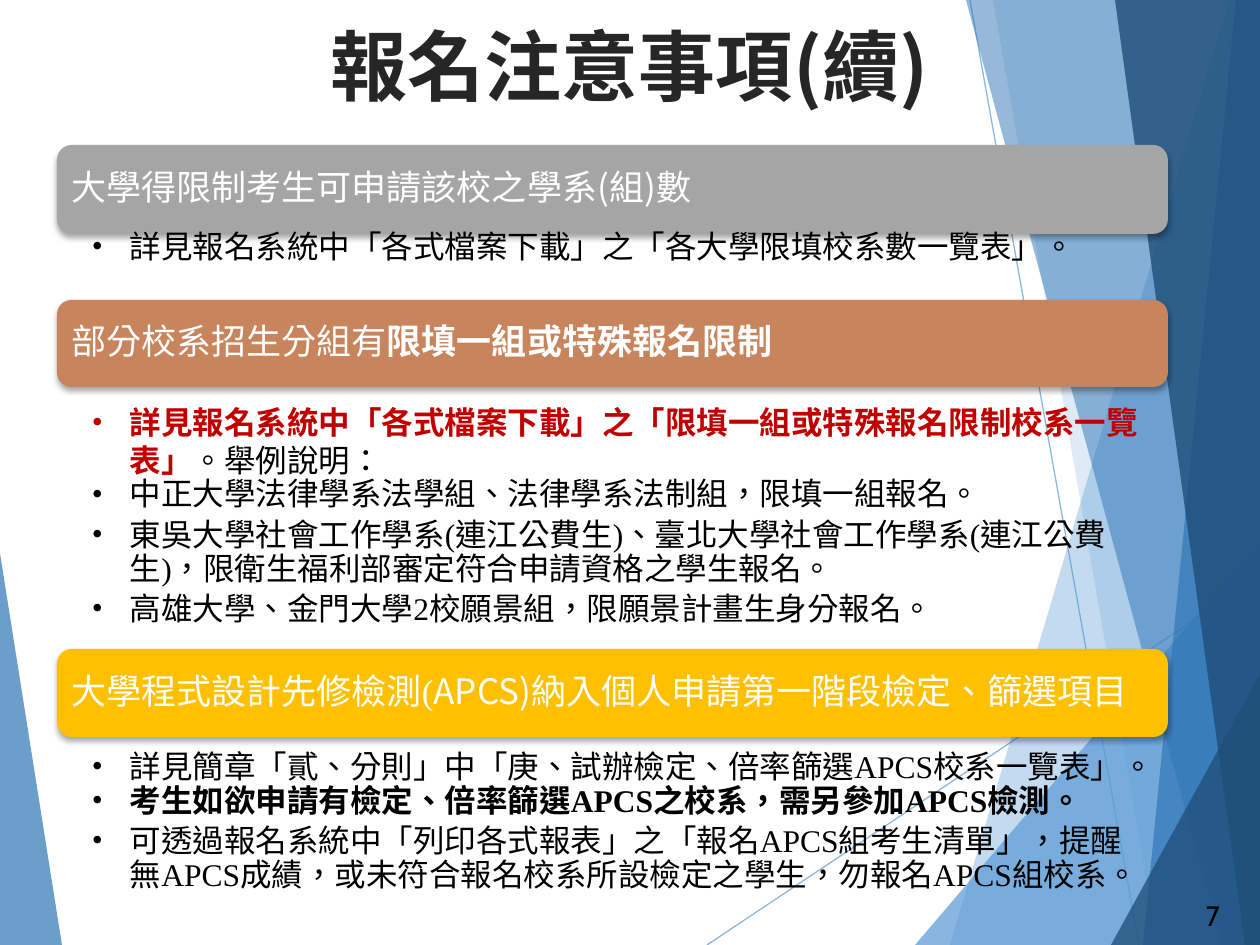
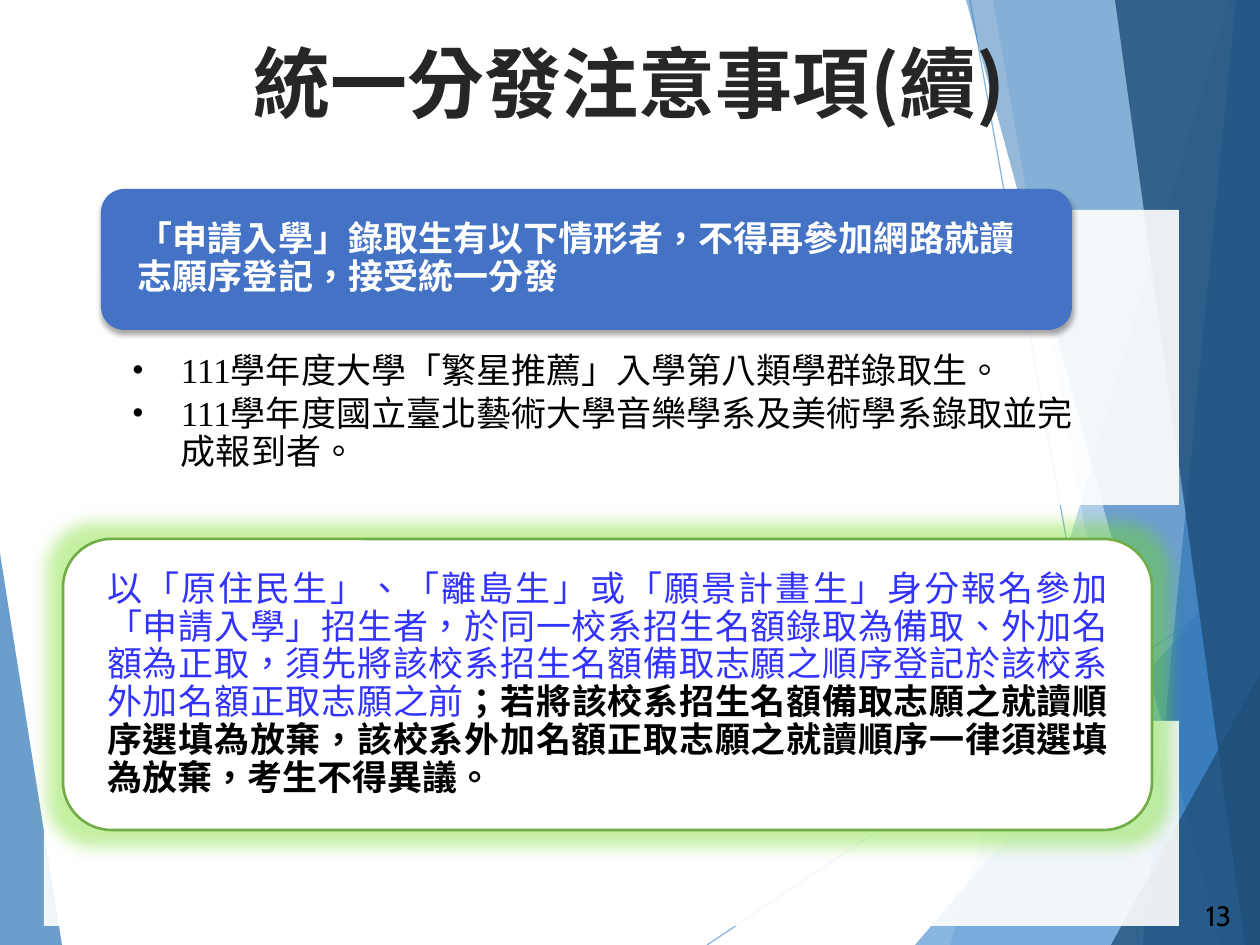
"""Build two slides of admission notes on a shared faceted blue background."""
from lxml.etree import SubElement
from pptx import Presentation
from pptx.dml.color import RGBColor
from pptx.enum.shapes import MSO_CONNECTOR, MSO_SHAPE
from pptx.enum.text import MSO_ANCHOR, PP_ALIGN
from pptx.oxml import parse_xml
from pptx.oxml.ns import nsdecls, qn
from pptx.util import Pt

PX = 914400 / 126
SKY = RGBColor(0x5B, 0x9B, 0xD5)
BLUE = RGBColor(0x2E, 0x75, 0xB6)
NAVY = RGBColor(0x1F, 0x4E, 0x79)
ROYAL = RGBColor(0x44, 0x72, 0xC4)
GRAY = RGBColor(0xA5, 0xA5, 0xA5)
COPPER = RGBColor(0xC8, 0x84, 0x5C)
GOLD = RGBColor(0xFF, 0xC0, 0x00)
GREEN = RGBColor(0x70, 0xAD, 0x47)
WHITE = RGBColor(0xFF, 0xFF, 0xFF)
BLACK = RGBColor(0x00, 0x00, 0x00)
CHARCOAL = RGBColor(0x26, 0x26, 0x26)
RED = RGBColor(0xC0, 0x00, 0x00)
VIOLET = RGBColor(0x33, 0x33, 0xFF)

SANS, SERIF, LABEL = "Noto Sans CJK SC", "Times New Roman", "Cabin"
TITLE = {"name": SANS, "size": Pt(44), "bold": True, "rgb": CHARCOAL}
NUMBER = {"name": LABEL, "size": Pt(16), "bold": False, "rgb": BLACK}
HEAD = {"name": SANS, "size": Pt(20), "bold": False, "rgb": WHITE}
HEAD_BOLD = HEAD | {"bold": True}
HEAD_SERIF = HEAD | {"name": SERIF}
BODY = {"name": SERIF, "size": Pt(18), "bold": False, "rgb": BLACK}
BODY_BOLD = BODY | {"bold": True}
BODY_RED = BODY_BOLD | {"rgb": RED}
LARGE = BODY | {"size": Pt(20)}
LARGE_BOLD = LARGE | {"bold": True}
LARGE_VIOLET = LARGE | {"rgb": VIOLET}
LARGE_HEAD = LARGE_BOLD | {"rgb": WHITE}

CENTER = {"alignment": PP_ALIGN.CENTER}
PLAIN = {"alignment": PP_ALIGN.LEFT}
LOOSE = {"alignment": PP_ALIGN.LEFT, "line_spacing": 1.0}
TIGHT = {"alignment": PP_ALIGN.LEFT, "line_spacing": 0.9}
ITEM = TIGHT | {"space_after": Pt(3.6)}
LARGE_ITEM = TIGHT | {"space_after": Pt(3)}
JUSTIFIED = TIGHT | {"alignment": PP_ALIGN.JUSTIFY}

SHADOW = ('<a:outerShdw %s blurRad="38100" dist="25400" dir="5400000" rotWithShape="0">'
          '<a:srgbClr val="000000"><a:alpha val="35000"/></a:srgbClr></a:outerShdw>')
GLOW = ('<a:glow %s rad="228600"><a:srgbClr val="6FDB18">'
        '<a:alpha val="40000"/></a:srgbClr></a:glow>')

RAYS = [(707, 945, 1260, 576), (970, 0, 1139, 945)]
FACETS = [
    (SKY, 36, [(1229, 0), (950, 945), (1260, 945), (1260, 0)]),
    (SKY, 20, [(993, 0), (1158, 945), (1260, 945), (1260, 0)]),
    (SKY, 72, [(915, 945), (1260, 541), (1260, 945)]),
    (BLUE, 50, [(966, 0), (1222, 945), (1260, 945), (1260, 0)]),
    (BLUE, 66, [(1236, 0), (1143, 945), (1260, 945), (1260, 0)]),
    (NAVY, 80, [(1115, 0), (1245, 945), (1260, 945), (1260, 0)]),
    (NAVY, 76, [(1111, 945), (1260, 674), (1260, 945)]),
    (BLUE, 70, [(0, 553), (62, 945), (0, 945)]),
]


def tint(fill, color, alpha):
    """Fill with a colour at the given percentage of opacity."""
    fill.solid()
    fill.fore_color.rgb = color
    node = next(fill._xPr.iter(qn("a:srgbClr")))
    SubElement(node, qn("a:alpha")).set("val", str(alpha * 1000))


def write(box, insets, anchor, paragraphs, hang=0):
    """Write formatted runs into a shape; a hang in px makes bullets."""
    frame = box.text_frame
    names = ("margin_left", "margin_top", "margin_right", "margin_bottom")
    settings = {name: round(inset * PX) for name, inset in zip(names, insets)}
    for name, value in (settings | {"word_wrap": True, "vertical_anchor": anchor}).items():
        setattr(frame, name, value)
    for index, (layout, runs) in enumerate(paragraphs):
        para = frame.add_paragraph() if index else frame.paragraphs[0]
        if hang:
            properties = para._p.get_or_add_pPr()
            properties.set("marL", str(round(hang * PX)))
            properties.set("indent", str(round(-hang * PX)))
            SubElement(properties, qn("a:buFont")).set("typeface", SERIF)
            SubElement(properties, qn("a:buChar")).set("char", "•")
        for name, value in layout.items():
            setattr(para, name, value)
        for text, style in runs:
            span = para.add_run()
            span.text = text
            for name, value in style.items():
                setattr(span.font.color if name == "rgb" else span.font, name, value)
            properties = span._r.get_or_add_rPr()
            properties.set("lang", "zh-TW")
            eastern = LABEL if style["name"] == SERIF else style["name"]
            SubElement(properties, qn("a:ea")).set("typeface", eastern)


TITLES = [("報名注意事項(續)", 20, "7"), ("統一分發注意事項(續)", 37, "13")]
PANELS = [[], [(44, 210, 1135, 295), (44, 721, 1135, 205)]]

BULLETS = [
    [
        ((57, 227, 1111, 62), (35, 4, 18, 4), 38, [
            (ITEM, [("詳見報名系統中「各式檔案下載」之「各大學限填校系數一覽表」。", BODY)]),
        ]),
        ((57, 399, 1111, 265), (35, 4, 18, 4), 38, [
            (LOOSE, [("詳見報名系統中「各式檔案下載」之「限填一組或特殊報名限制校系一覽表」", BODY_RED),
                     ("。舉例說明：", BODY)]),
            (ITEM, [("中正大學法律學系法學組、法律學系法制組，限填一組報名。", BODY)]),
            (ITEM, [("東吳大學社會工作學系(連江公費生)、臺北大學社會工作學系(連江公費生)，"
                     "限衛生福利部審定符合申請資格之學生報名。", BODY)]),
            (ITEM, [("高雄大學、金門大學2校願景組，限願景計畫生身分報名。", BODY)]),
        ]),
        ((57, 743, 1111, 200), (35, 4, 18, 4), 38, [
            (LOOSE, [("詳見簡章「貳、分則」中「庚、試辦檢定、倍率篩選APCS校系一覽表」。", BODY)]),
            (ITEM, [("考生如欲申請有檢定、倍率篩選APCS之校系，需另參加APCS檢測。", BODY_BOLD)]),
            (ITEM, [("可透過報名系統中「列印各式報表」之「報名APCS組考生清單」，提醒無APCS成績，"
                     "或未符合報名校系所設檢定之學生，勿報名APCS組校系。", BODY)]),
        ]),
    ],
    [
        ((44, 349, 1135, 156), (88, 4, 88, 4), 49, [
            (LARGE_ITEM, [("111學年度大學「繁星推薦」入學第八類學群錄取生。", LARGE)]),
            (LARGE_ITEM, [("111學年度國立臺北藝術大學音樂學系及美術學系錄取並完成報到者。", LARGE)]),
        ]),
    ],
]

BARS = [
    [
        ((57, 145, 1111, 89), GRAY, None, SHADOW, (10, 10, 10, 10), TIGHT,
         [("大學得限制考生可申請該校之學系(組)數", HEAD)]),
        ((57, 300, 1111, 87), COPPER, None, SHADOW, (10, 10, 10, 10), TIGHT,
         [("部分校系招生分組有", HEAD), ("限填一組或特殊報名限制", HEAD_BOLD)]),
        ((57, 649, 1111, 88), GOLD, None, SHADOW, (10, 10, 10, 10), TIGHT,
         [("大學程式設計先修檢測(", HEAD_SERIF),
          ("APCS)納入個人申請第一階段檢定、篩選項目", HEAD)]),
    ],
    [
        ((101, 189, 971, 141), ROYAL, None, SHADOW, (30, 0, 30, 0), TIGHT,
         [("「申請入學」錄取生有以下情形者，不得再參加網路就讀志願序登記，接受統一分發", LARGE_HEAD)]),
        ((63, 539, 1089, 291), WHITE, GREEN, GLOW, (30, 0, 30, 0), JUSTIFIED,
         [("以「原住民生」、「離島生」或「願景計畫生」身分報名參加「申請入學」招生者，"
           "於同一校系招生名額錄取為備取、外加名額為正取，"
           "須先將該校系招生名額備取志願之順序登記於該校系外加名額正取志願之前", LARGE_VIOLET),
          ("；若將該校系招生名額備取志願之就讀順序選填為放棄，"
           "該校系外加名額正取志願之就讀順序一律須選填為放棄，考生不得異議。", LARGE_BOLD)]),
    ],
]

deck = Presentation()
deck.slide_width, deck.slide_height = round(1260 * PX), round(945 * PX)

for (title, title_top, number), panels, bullets, bars in zip(TITLES, PANELS, BULLETS, BARS):
    page = deck.slides.add_slide(deck.slide_layouts[6])
    shapes = page.shapes

    for ray in RAYS:
        line = shapes.add_connector(MSO_CONNECTOR.STRAIGHT, *[round(v * PX) for v in ray])
        line.line.width = Pt(0.75)
        tint(line.line.fill, SKY, 70)
        SubElement(line._element.spPr, qn("a:effectLst"))

    for color, alpha, points in FACETS:
        builder = shapes.build_freeform(*points[0], scale=PX)
        builder.add_line_segments(points[1:], close=True)
        facet = builder.convert_to_shape()
        facet.shadow.inherit = False
        facet.line.fill.background()
        tint(facet.fill, color, alpha)

    box = shapes.add_textbox(*[round(v * PX) for v in (1193, 892, 66, 47)])
    write(box, (13, 6, 13, 6), MSO_ANCHOR.TOP, [(PLAIN, [(number, NUMBER)])])
    box = shapes.add_textbox(*[round(v * PX) for v in (57, title_top, 1145, 89)])
    write(box, (13, 6, 13, 6), MSO_ANCHOR.MIDDLE, [(CENTER, [(title, TITLE)])])

    for place in panels:
        panel = shapes.add_shape(MSO_SHAPE.RECTANGLE, *[round(v * PX) for v in place])
        panel.shadow.inherit = False
        panel.line.fill.background()
        tint(panel.fill, WHITE, 90)

    for place, color, outline, effect, insets, layout, runs in bars:
        bar = shapes.add_shape(MSO_SHAPE.ROUNDED_RECTANGLE, *[round(v * PX) for v in place])
        bar.shadow.inherit = False
        bar._element.spPr.find(qn("a:effectLst")).append(parse_xml(effect % nsdecls("a")))
        bar.fill.solid()
        bar.fill.fore_color.rgb = color
        if outline:
            bar.line.color.rgb = outline
            bar.line.width = Pt(1.5)
        else:
            bar.line.fill.background()
        write(bar, insets, MSO_ANCHOR.MIDDLE, [(layout, runs)])

    for place, insets, hang, paragraphs in bullets:
        box = shapes.add_textbox(*[round(v * PX) for v in place])
        write(box, insets, MSO_ANCHOR.TOP, paragraphs, hang)

deck.save("out.pptx")
